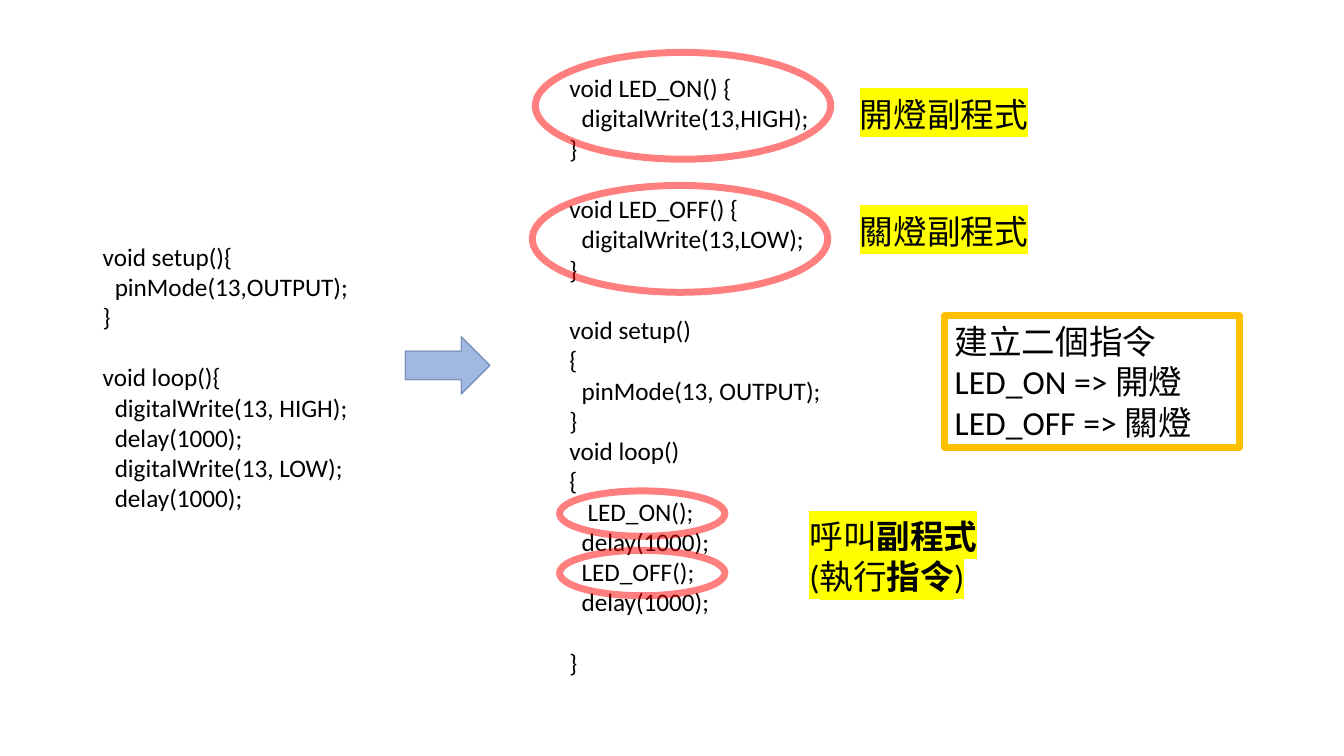
from lxml import etree
from pptx import Presentation
from pptx.dml.color import RGBColor
from pptx.enum.shapes import MSO_SHAPE
from pptx.enum.text import MSO_ANCHOR, MSO_AUTO_SIZE, PP_ALIGN
from pptx.oxml.ns import qn
from pptx.util import Inches, Pt

ARROW = MSO_SHAPE.RIGHT_ARROW
ELLIPSE = MSO_SHAPE.OVAL
RECTANGLE = MSO_SHAPE.RECTANGLE
MIDDLE = MSO_ANCHOR.MIDDLE
GROW = MSO_AUTO_SIZE.SHAPE_TO_FIT_TEXT
LEFT = PP_ALIGN.LEFT

BLACK = RGBColor(0x00, 0x00, 0x00)
BLUE = RGBColor(0x44, 0x72, 0xC4)
NAVY = RGBColor(0x32, 0x54, 0x91)
RED = RGBColor(0xFF, 0x00, 0x00)
GOLD = RGBColor(0xFF, 0xC0, 0x00)
YELLOW = RGBColor(0xFF, 0xFF, 0x00)

SPACE_WIDTH = 0.06
BLANK_LINE = 21.6

INLINE_CODE = """void setup(){
  pinMode(13,OUTPUT);
}

void loop(){
  digitalWrite(13, HIGH);
  delay(1000);
  digitalWrite(13, LOW);
  delay(1000);"""

SUBROUTINE_CODE = """void LED_ON() {
  digitalWrite(13,HIGH);
}

void LED_OFF() {
  digitalWrite(13,LOW);
}

void setup()
{
  pinMode(13, OUTPUT);
}
void loop()
{
   LED_ON();
  delay(1000);
  LED_OFF();
  delay(1000);

}"""


def add_span(para, text, size=24, bold=False, highlight=None):
    span = para.add_run()
    span.text = text
    font = span.font
    font.size = Pt(size)
    font.bold = bold
    font.name = "Calibri"
    font.color.rgb = BLACK
    if highlight is not None:
        marker = etree.Element(qn("a:highlight"))
        etree.SubElement(marker, qn("a:srgbClr"), val=str(highlight))
        span.font._element.find(qn("a:solidFill")).addnext(marker)


def make_half_transparent(shape):
    for color in shape._element.spPr.iter(qn("a:srgbClr")):
        etree.SubElement(color, qn("a:alpha"), val="50000")


class SlideBuilder:
    def __init__(self, slide):
        self.slide = slide

    def text_box(self, left, top, width, height):
        box = self.slide.shapes.add_textbox(
            Inches(left), Inches(top), Inches(width), Inches(height))
        box.text_frame.word_wrap = True
        box.text_frame.auto_size = GROW
        return box.text_frame

    def code(self, source, left, top, width, height):
        frame = self.text_box(left, top, width, height)
        para = frame.paragraphs[0]
        for block_number, block in enumerate(source.split("\n\n")):
            for line_number, line in enumerate(block.split("\n")):
                if block_number or line_number:
                    para = frame.add_paragraph()
                if block_number and not line_number:
                    para.space_before = Pt(BLANK_LINE)
                text = line.lstrip()
                indent = (len(line) - len(text)) * SPACE_WIDTH
                para._p.get_or_add_pPr().set("marL", str(Inches(indent)))
                add_span(para, text, size=18)

    def label(self, parts, left, top, width, height):
        para = self.text_box(left, top, width, height).paragraphs[0]
        for text, bold in parts:
            add_span(para, text, bold=bold, highlight=YELLOW)

    def shape(self, kind, left, top, width, height, line, weight):
        shape = self.slide.shapes.add_shape(
            kind, Inches(left), Inches(top), Inches(width), Inches(height))
        shape.shadow.inherit = False
        shape.fill.background()
        shape.line.color.rgb = line
        shape.line.width = Pt(weight)
        return shape

    def arrow(self, left, top, width, height):
        arrow = self.shape(ARROW, left, top, width, height, NAVY, 1)
        arrow.fill.solid()
        arrow.fill.fore_color.rgb = BLUE
        make_half_transparent(arrow)
        arrow.line.color.rgb = NAVY

    def ring(self, left, top, width, height):
        make_half_transparent(
            self.shape(ELLIPSE, left, top, width, height, RED, 5))

    def framed_note(self, lines, left, top, width, height):
        note = self.shape(RECTANGLE, left, top, width, height, GOLD, 5)
        frame = note.text_frame
        frame.word_wrap = True
        frame.auto_size = GROW
        frame.vertical_anchor = MIDDLE
        for number, line in enumerate(lines):
            para = frame.add_paragraph() if number else frame.paragraphs[0]
            para.alignment = LEFT
            add_span(para, line)


def main():
    deck = Presentation()
    deck.slide_width = Inches(13.33)
    deck.slide_height = Inches(7.5)
    page = SlideBuilder(deck.slides.add_slide(deck.slide_layouts[6]))

    page.code(INLINE_CODE, 0.92, 2.34, 2.86, 2.83)
    page.code(SUBROUTINE_CODE, 5.55, 0.67, 3.24, 6.16)
    page.arrow(4.02, 3.34, 0.84, 0.57)

    call_parts = [("呼叫", False), ("副程式", True), ("(執行", False),
                  ("指令", True), (")", False)]
    page.label(call_parts, 7.93, 5.07, 1.9, 0.91)
    for text, top in (("開燈副程式", 0.88), ("關燈副程式", 2.04)):
        page.label([(text, False)], 8.43, top, 2.01, 0.5)

    for top in (4.87, 5.46):
        page.ring(5.55, top, 1.64, 0.45)
    for left, top in ((5.28, 1.84), (5.31, 0.52)):
        page.ring(left, top, 2.93, 1.06)

    note_lines = ["建立二個指令", "LED_ON => 開燈", "LED_OFF => 關燈"]
    page.framed_note(note_lines, 9.37, 3.13, 2.92, 1.31)

    deck.save("out.pptx")


if __name__ == "__main__":
    main()
